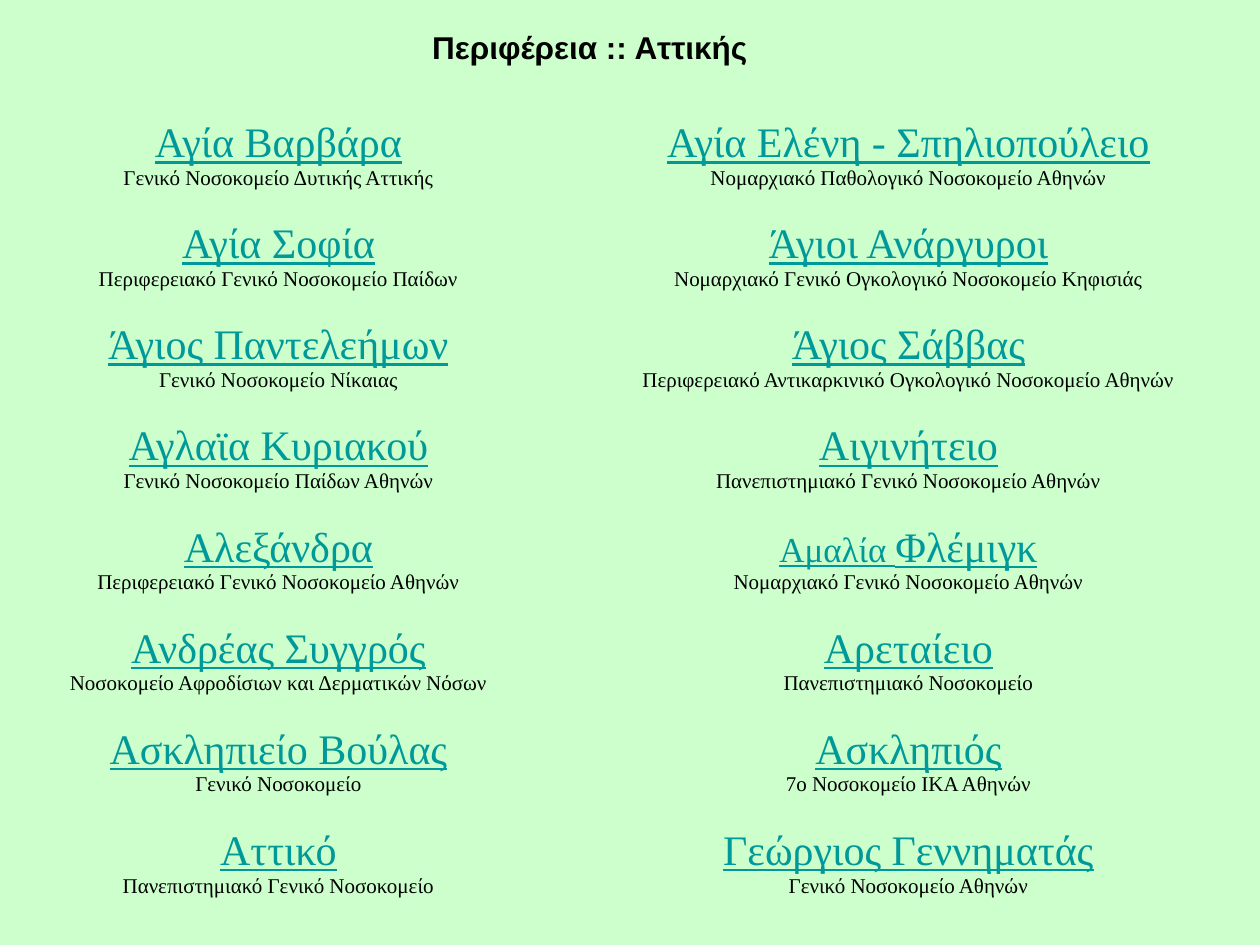
from pptx import Presentation, util as u
from pptx.dml import color
from pptx.enum import text
from pptx.oxml import ns

THEME = {
    "background": color.RGBColor(0xCC, 0xFF, 0xCC),
    "heading": {"name": "Arial", "size": u.Pt(18), "bold": True,
                "color": color.RGBColor(0, 0, 0)},
    "hospital": {"name": "Times New Roman", "size": u.Pt(24), "underline": True,
                 "color": color.RGBColor(0x00, 0x99, 0x99)},
    "kind": {"name": "Times New Roman", "size": u.Pt(12), "underline": False,
             "color": color.RGBColor(0, 0, 0)},
}
THEME["first_name"] = {**THEME["hospital"], "size": u.Pt(20)}
NO_GRID_STYLE = "{2D5ABB26-0587-4C30-8999-92F81FD0307C}"

# Each row: left name, left kind, right name, right kind
HOSPITALS = [
    ("Αγία Βαρβάρα", "Γενικό Νοσοκομείο Δυτικής Αττικής",
     "Αγία Ελένη - Σπηλιοπούλειο", "Νομαρχιακό Παθολογικό Νοσοκομείο Αθηνών"),
    ("Αγία Σοφία", "Περιφερειακό Γενικό Νοσοκομείο Παίδων",
     "Άγιοι Ανάργυροι", "Νομαρχιακό Γενικό Ογκολογικό Νοσοκομείο Κηφισιάς"),
    ("Άγιος Παντελεήμων", "Γενικό Νοσοκομείο Νίκαιας",
     "Άγιος Σάββας", "Περιφερειακό Αντικαρκινικό Ογκολογικό Νοσοκομείο Αθηνών"),
    ("Αγλαϊα Κυριακού", "Γενικό Νοσοκομείο Παίδων Αθηνών",
     "Αιγινήτειο", "Πανεπιστημιακό Γενικό Νοσοκομείο Αθηνών"),
    ("Αλεξάνδρα", "Περιφερειακό Γενικό Νοσοκομείο Αθηνών",
     "Αμαλία Φλέμιγκ", "Νομαρχιακό Γενικό Νοσοκομείο Αθηνών"),
    ("Ανδρέας Συγγρός", "Νοσοκομείο Αφροδίσιων και Δερματικών Νόσων",
     "Αρεταίειο", "Πανεπιστημιακό Νοσοκομείο"),
    ("Ασκληπιείο Βούλας", "Γενικό Νοσοκομείο",
     "Ασκληπιός", "7ο Νοσοκομείο ΙΚΑ Αθηνών"),
    ("Αττικό", "Πανεπιστημιακό Γενικό Νοσοκομείο",
     "Γεώργιος Γεννηματάς", "Γενικό Νοσοκομείο Αθηνών"),
]
SMALL_FIRST_NAME = "Αμαλία "


def add_span(para, wording, style):
    span = para.add_run()
    span.text = wording
    for key, value in THEME[style].items():
        if key == "color":
            span.font.color.rgb = value
        else:
            setattr(span.font, key, value)


# Page
deck = Presentation()
deck.slide_width, deck.slide_height = u.Inches(10), u.Inches(7.5)
page = deck.slides.add_slide(deck.slide_layouts[5])
page.background.fill.solid()
page.background.fill.fore_color.rgb = THEME["background"]

# Title
title = page.shapes.title
title.left, title.top = u.Inches(3.33), u.Inches(0.17)
title.width, title.height = u.Inches(2.71), u.Inches(0.7)
frame = title.text_frame
for key, value in {"word_wrap": False, "auto_size": text.MSO_AUTO_SIZE.NONE,
                   "vertical_anchor": text.MSO_ANCHOR.TOP}.items():
    setattr(frame, key, value)
frame.paragraphs[0].alignment = text.PP_ALIGN.LEFT
add_span(frame.paragraphs[0], "Περιφέρεια :: Αττικής", "heading")

# Hospital table, without grid or banding
table = page.shapes.add_table(len(HOSPITALS), 2, u.Inches(0), u.Inches(0.83),
                              u.Inches(10), u.Inches(6.42)).table
table.first_row = table.horz_banding = False
table._tbl.tblPr.find(ns.qn("a:tableStyleId")).text = NO_GRID_STYLE
for column, width in zip(table.columns, (4.42, 5.58)):
    column.width = u.Inches(width)

for row, (left_name, left_kind, right_name, right_kind) in enumerate(HOSPITALS):
    for column, (name, kind) in enumerate([(left_name, left_kind),
                                           (right_name, right_kind)]):
        cell = table.cell(row, column)
        cell.fill.background()
        cell.vertical_anchor = text.MSO_ANCHOR.MIDDLE
        para = cell.text_frame.paragraphs[0]
        para.alignment = text.PP_ALIGN.CENTER
        if name.startswith(SMALL_FIRST_NAME):
            add_span(para, SMALL_FIRST_NAME, "first_name")
            name = name.removeprefix(SMALL_FIRST_NAME)
        add_span(para, name, "hospital")
        para.add_line_break()
        add_span(para, kind, "kind")

deck.save("out.pptx")
